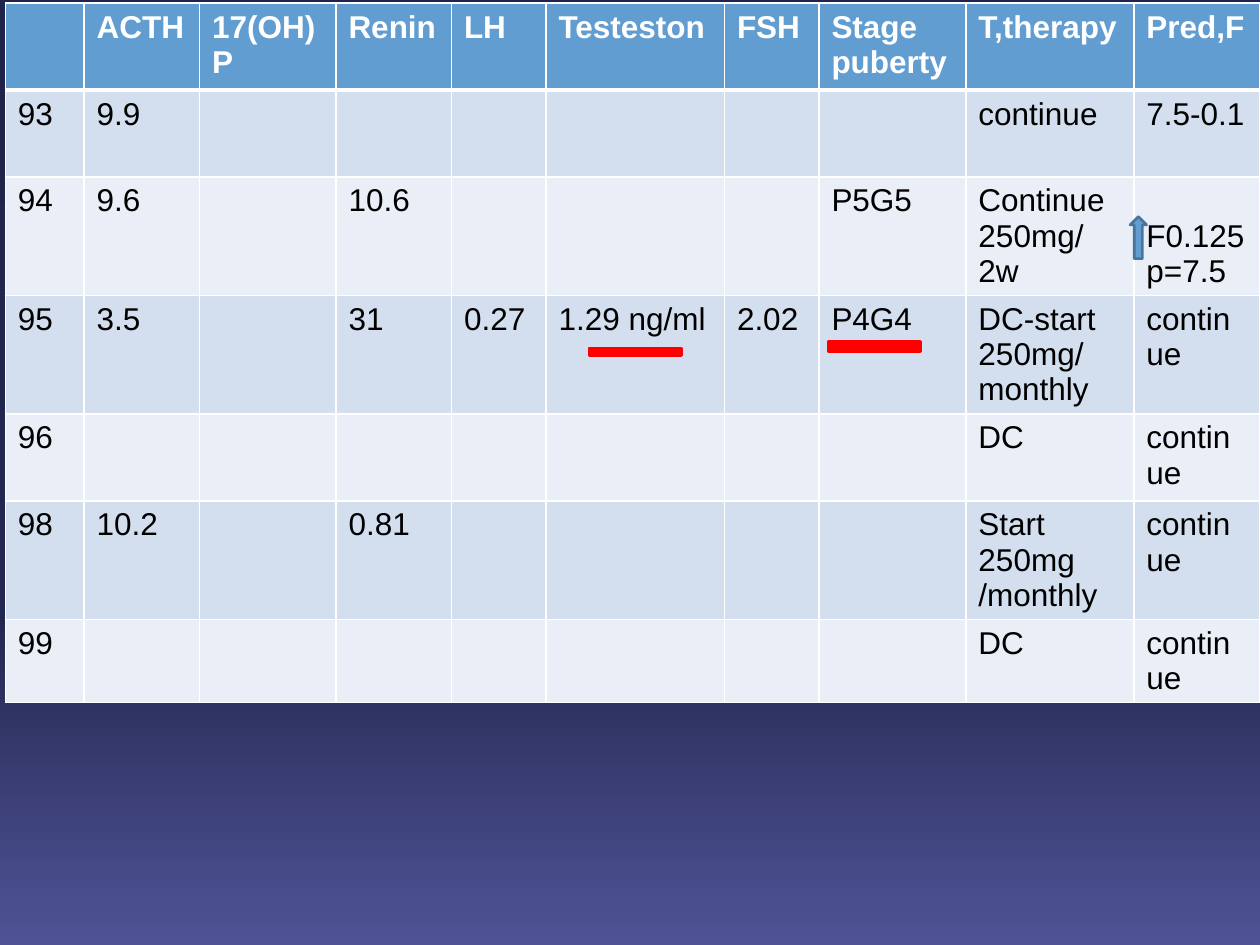
from pptx import Presentation
from pptx.dml.color import RGBColor
from pptx.enum.shapes import MSO_SHAPE as SHAPE
from pptx.enum.text import MSO_ANCHOR as ANCHOR
from pptx.oxml import parse_xml
from pptx.oxml.ns import nsdecls
from pptx.util import Pt


def rgb(color):
    return RGBColor.from_string(color)


def write(cell, text, size=18, color="000000", bold=False, font="Arial"):
    tf = cell.text_frame
    for i, line in enumerate(text.split("\n")):
        p = tf.add_paragraph() if i else tf.paragraphs[0]
        r = p.add_run()
        r.text = line
        r.font.size, r.font.bold, r.font.name = Pt(size), bold, font
        r.font.color.rgb = rgb(color)


prs = Presentation()
prs.slide_width, prs.slide_height = Pt(720), Pt(540)
s = prs.slides.add_slide(prs.slide_layouts[6])

fill = s.background.fill
fill.gradient()
fill.gradient_angle = 270
stops = fill.gradient_stops
gs_lst = s.background._cSld.find(".//{*}gsLst")
for gs in list(gs_lst):
    gs_lst.remove(gs)
for pos, color in [(0, "21244A"), (65, "232750"), (100, "4F5395")]:
    gs_lst.append(parse_xml(
        f'<a:gs {nsdecls("a")} pos="{pos * 1000}"><a:srgbClr val="{color}"/></a:gs>'))

widths = [45, 66, 78, 66, 54, 102, 54, 84, 96, 72]
heights = [49.7] * 6 + [37.4]
rows = [
    ["", "ACTH", "17(OH)\nP", "Renin", "LH", "Testeston", "FSH",
     "Stage\npuberty", "T,therapy", "Pred,F"],
    ["93", "9.9", "", "", "", "", "", "", "continue", "7.5-0.1"],
    ["94", "9.6", "", "10.6", "", "", "", "P5G5", "Continue250mg/\n2w", "F0.125p=7.5"],
    ["95", "3.5", "", "31", "0.27", "1.29 ng/ml", "2.02", "P4G4",
     "DC-start\n250mg/\nmonthly", "continue"],
    ["96", "", "", "", "", "", "", "", "DC", "continue"],
    ["98", "10.2", "", "0.81", "", "", "", "", "Start\n250mg\n/monthly", "continue"],
    ["99", "", "", "", "", "", "", "", "DC", "continue"],
]
table = s.shapes.add_table(len(rows), len(widths), Pt(3), Pt(1.8),
                           Pt(sum(widths)), Pt(sum(heights))).table
for col, width in zip(table.columns, widths):
    col.width = Pt(width)
for row, height in zip(table.rows, heights):
    row.height = Pt(height)

for i, row in enumerate(rows):
    for j, text in enumerate(row):
        cell = table.cell(i, j)
        tc_pr = cell._tc.get_or_add_tcPr()
        for side in "LRTB":
            header_edge = (i, side) in [(0, "B"), (1, "T")]
            tc_pr.append(parse_xml(
                f'<a:ln{side} {nsdecls("a")} w="{Pt(3 if header_edge else 1)}">'
                f'<a:solidFill><a:srgbClr val="FFFFFF"/></a:solidFill></a:ln{side}>'))
        cell.fill.solid()
        cell.fill.fore_color.rgb = rgb(
            "629DD1" if i == 0 else "D3DFEE" if i % 2 else "EAEFF7")
        if text:
            write(cell, text, color="000000" if i else "FFFFFF", bold=i == 0)
table.cell(2, 9).vertical_anchor = ANCHOR.BOTTOM

marks = [
    (SHAPE.UP_ARROW, 645.8, 123.8, 9.4, 24, "629DD1", "49749B"),
    (SHAPE.MATH_MINUS, 327, 192, 72, 18, "FF0000", "FF0000"),
    (SHAPE.MATH_MINUS, 463.7, 186, 72, 24, "FF0000", "FF0000"),
]
for kind, x, y, w, h, color, line in marks:
    sp = s.shapes.add_shape(kind, Pt(x), Pt(y), Pt(w), Pt(h))
    sp.shadow.inherit = False
    sp.fill.solid()
    sp.fill.fore_color.rgb = rgb(color)
    sp.line.color.rgb = rgb(line)
    sp.line.width = Pt(1.5)

prs.save("out.pptx")
